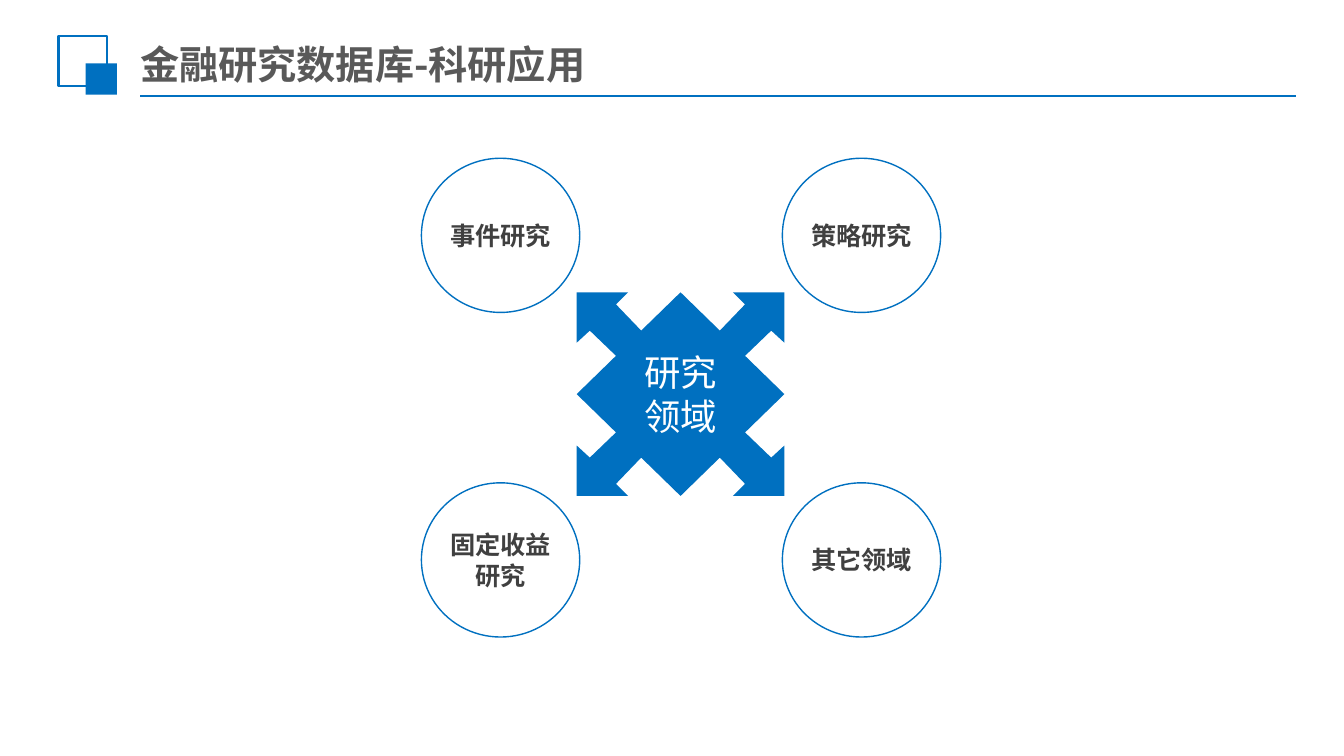
from lxml import etree
from pptx import Presentation
from pptx.dml.color import RGBColor
from pptx.enum import shapes, text
from pptx.oxml import ns
from pptx.util import Inches, Pt

FONT = "Noto Sans CJK SC"
COLORS = {"blue": "0070C0", "white": "FFFFFF", "title": "595959", "label": "404040"}


def rgb(name):
    return RGBColor.from_string(COLORS[name])


def write(s, lines, size, color, bold, align, margins=(0, 0, 0, 0)):
    tf = s.text_frame
    frame = dict(zip(("margin_left", "margin_top", "margin_right", "margin_bottom"),
                     map(Inches, margins)))
    frame.update(word_wrap=True, vertical_anchor=text.MSO_ANCHOR.MIDDLE)
    for key, value in frame.items():
        setattr(tf, key, value)
    for i, line in enumerate(lines):
        p = tf.paragraphs[0] if i == 0 else tf.add_paragraph()
        p.alignment = align
        r = p.add_run()
        r.text = line
        for key, value in {"size": Pt(size), "bold": bold, "name": FONT}.items():
            setattr(r.font, key, value)
        r.font.color.rgb = rgb(color)
        # East Asian typeface
        etree.SubElement(r.font._element, ns.qn("a:ea"), typeface=FONT)


prs = Presentation()
prs.slide_width, prs.slide_height = Inches(13.33), Inches(7.5)
slide = prs.slides.add_slide(prs.slide_layouts[6])
sp = slide.shapes

# Title rule
rule = sp.add_connector(shapes.MSO_CONNECTOR.STRAIGHT,
                        Inches(1.39), Inches(0.95), Inches(12.85), Inches(0.95))
rule.line.color.rgb = rgb("blue")
rule.line.width = Pt(1.25)
etree.SubElement(rule._element.spPr, ns.qn("a:effectLst"))

# Title emblem: outlined square behind a filled one
outer = sp.add_shape(shapes.MSO_SHAPE.RECTANGLE,
                     Inches(0.58), Inches(0.36), Inches(0.48), Inches(0.49))
outer.fill.background()
outer.line.color.rgb = rgb("blue")
outer.line.width = Pt(1.5)
inner = sp.add_shape(shapes.MSO_SHAPE.RECTANGLE,
                     Inches(0.85), Inches(0.63), Inches(0.31), Inches(0.31))
inner.fill.solid()
inner.fill.fore_color.rgb = rgb("blue")
inner.line.fill.background()
for s in (outer, inner):
    s.shadow.inherit = False

# Title
title = sp.add_textbox(Inches(1.32), Inches(0.39), Inches(8.6), Inches(0.48))
write(title, ["金融研究数据库-科研应用"], 28, "title", True, text.PP_ALIGN.LEFT,
      (0.07, 0.04, 0.07, 0.04))

# Research fields in a 2 x 2 grid
FIELDS = [["事件研究", "策略研究"], ["固定收益研究", "其它领域"]]
for row, top in enumerate((1.57, 4.79)):
    for col, left in enumerate((4.18, 7.76)):
        s = sp.add_shape(shapes.MSO_SHAPE.OVAL,
                         Inches(left), Inches(top), Inches(1.57), Inches(1.53))
        s.shadow.inherit = False
        s.fill.solid()
        s.fill.fore_color.rgb = rgb("white")
        s.line.color.rgb = rgb("blue")
        s.line.width = Pt(1)
        write(s, [FIELDS[row][col]], 18, "label", True, text.PP_ALIGN.CENTER)

# Central diamond with four arrows: one quarter, mirrored and then turned
CX, CY = 6.75, 3.91
quarter = [(-1.03, 0), (-0.64, -0.38), (-0.9, -0.63), (-1.03, -0.51), (-1.03, -1.01),
           (-0.52, -1.01), (-0.64, -0.89), (-0.39, -0.63)]
upper = quarter + [(0, -1.01)] + [(-x, y) for x, y in quarter[:0:-1]]
outline = upper + [(-x, -y) for x, y in upper]
points = [(Inches(CX + x), Inches(CY + y)) for x, y in outline]
builder = sp.build_freeform(*points[0])
builder.add_line_segments(points[1:], close=True)
hub = builder.convert_to_shape()
hub.shadow.inherit = False
hub.fill.solid()
hub.fill.fore_color.rgb = rgb("blue")
hub.line.fill.background()
write(hub, ["研究", "领域"], 26, "white", False, text.PP_ALIGN.CENTER)

prs.save("out.pptx")
